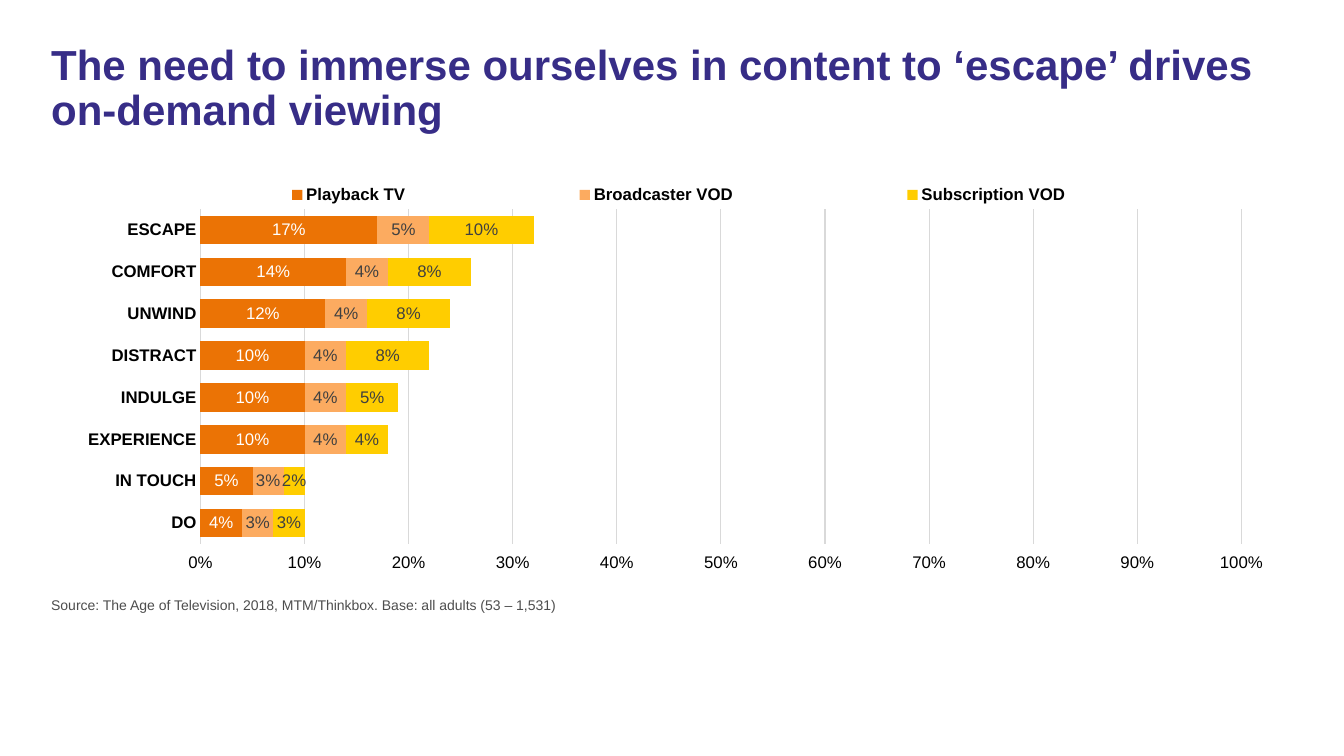
from dataclasses import dataclass

from lxml import etree
from pptx import Presentation
from pptx.chart.data import CategoryChartData
from pptx.dml.color import RGBColor
from pptx.enum.chart import (XL_CHART_TYPE, XL_LABEL_POSITION, XL_LEGEND_POSITION,
                             XL_TICK_LABEL_POSITION, XL_TICK_MARK)
from pptx.enum.text import MSO_ANCHOR
from pptx.oxml.ns import qn
from pptx.util import Inches, Pt

STACKED_BARS = XL_CHART_TYPE.BAR_STACKED
CENTER = XL_LABEL_POSITION.CENTER
LEGEND_BOTTOM = XL_LEGEND_POSITION.BOTTOM
NO_TICK = XL_TICK_MARK.NONE
LABELS_HIGH = XL_TICK_LABEL_POSITION.HIGH
TOP = MSO_ANCHOR.TOP

FONT = "Arial"
PERCENT = "0%"
COLORS = {
    "title": "372D87", "source": "4D4D4D", "text": "000000", "grid": "D9D9D9",
    "playback": "EB7305", "broadcaster": "FCAB60", "subscription": "FFCD00",
    "light_label": "FFFFFF", "dark_label": "404040",
}
NEEDS = ["ESCAPE", "COMFORT", "UNWIND", "DISTRACT",
         "INDULGE", "EXPERIENCE", "IN TOUCH", "DO"]


@dataclass
class Caption:
    text: str
    top: float
    height: float
    size: int
    color: str
    bold: bool = False
    line_spacing: float = 1.0


@dataclass
class Viewing:
    name: str
    percents: list[int]
    color: str
    label_color: str


CAPTIONS = [
    Caption("The need to immerse ourselves in content to ‘escape’ drives on-demand viewing",
            0.39, 1.12, 30, "title", True, 0.9),
    Caption("Source: The Age of Television, 2018, MTM/Thinkbox. Base: all adults (53 – 1,531)",
            5.87, 0.33, 10, "source"),
]
VIEWINGS = [
    Viewing("Playback TV", [17, 14, 12, 10, 10, 10, 5, 4], "playback", "light_label"),
    Viewing("Broadcaster VOD", [5, 4, 4, 4, 4, 4, 3, 3], "broadcaster", "dark_label"),
    Viewing("Subscription VOD", [10, 8, 8, 8, 5, 4, 2, 3], "subscription", "dark_label"),
]


def rgb(name: str) -> RGBColor:
    return RGBColor.from_string(COLORS[name])


def style_font(font, size: int, color: str, bold: bool = False) -> None:
    font.name = FONT
    font.size = Pt(size)
    font.bold = bold
    font.color.rgb = rgb(color)


def add_caption(page, caption: Caption) -> None:
    box = page.shapes.add_textbox(Inches(0.41), Inches(caption.top),
                                  Inches(12.4), Inches(caption.height))
    frame = box.text_frame
    frame.word_wrap = True
    frame.vertical_anchor = TOP
    para = frame.paragraphs[0]
    para.text = caption.text
    para.line_spacing = caption.line_spacing
    style_font(para.font, caption.size, caption.color, caption.bold)


def place(layout, left: float, top: float, width: float, height: float,
          inner: bool = False) -> None:
    """Fill a chart layout element with fractions of the chart's size."""
    for child in list(layout):
        layout.remove(child)
    manual = etree.SubElement(layout, qn("c:manualLayout"))
    settings = [("layoutTarget", "inner")] if inner else []
    settings += [("xMode", "edge"), ("yMode", "edge"),
                 ("x", left), ("y", top), ("w", width), ("h", height)]
    for tag, value in settings:
        etree.SubElement(manual, qn(f"c:{tag}")).set("val", str(value))


def style_axes(chart) -> None:
    needs, shares = chart.category_axis, chart.value_axis
    for axis in (needs, shares):
        axis.major_tick_mark = axis.minor_tick_mark = NO_TICK
        axis.format.line.fill.background()
        style_font(axis.tick_labels.font, 12, "text", bold=axis is needs)
    needs.reverse_order = True
    needs.has_major_gridlines = False
    shares.tick_label_position = LABELS_HIGH
    shares.minimum_scale, shares.maximum_scale = 0, 1
    shares.major_unit = 0.1
    shares.tick_labels.number_format = PERCENT
    shares.tick_labels.number_format_is_linked = False
    grid = shares.major_gridlines.format.line
    grid.color.rgb = rgb("grid")
    grid.width = Pt(0.75)


def add_viewing_chart(page) -> None:
    data = CategoryChartData(number_format=PERCENT)
    data.categories = NEEDS
    for viewing in VIEWINGS:
        data.add_series(viewing.name, [percent / 100 for percent in viewing.percents])
    chart = page.shapes.add_chart(STACKED_BARS, Inches(0.65), Inches(1.65),
                                  Inches(11.95), Inches(4.05), data).chart
    chart.has_title = False
    style_font(chart.font, 10, "text")
    style_axes(chart)

    # Bars and their labels
    plot = chart.plots[0]
    plot.gap_width, plot.overlap = 46, 100
    plot.vary_by_categories = False
    for series, viewing in zip(plot.series, VIEWINGS):
        series.format.fill.solid()
        series.format.fill.fore_color.rgb = rgb(viewing.color)
        labels = series.data_labels
        labels.show_value = True
        labels.position = CENTER
        labels.number_format = PERCENT
        labels.number_format_is_linked = False
        style_font(labels.font, 12, viewing.label_color)

    # Legend above the plot
    chart.has_legend = True
    legend = chart.legend
    legend.position = LEGEND_BOTTOM
    legend.include_in_layout = False
    style_font(legend.font, 12, "text", bold=True)
    legend_layout = etree.Element(qn("c:layout"))
    legend._element.find(qn("c:legendPos")).addnext(legend_layout)
    place(legend_layout, 0.048, 0.03, 0.922, 0.08)

    # Plot area
    plot_area = chart._chartSpace.chart.plotArea
    plot_layout = plot_area.find(qn("c:layout"))
    if plot_layout is None:
        plot_layout = etree.Element(qn("c:layout"))
        plot_area.insert(0, plot_layout)
    place(plot_layout, 0.112, 0.105, 0.864, 0.82, inner=True)


def main() -> None:
    deck = Presentation()
    deck.slide_width, deck.slide_height = Inches(13.33), Inches(7.5)
    page = deck.slides.add_slide(deck.slide_layouts[6])
    for caption in CAPTIONS:
        add_caption(page, caption)
    add_viewing_chart(page)
    deck.save("out.pptx")


if __name__ == "__main__":
    main()
